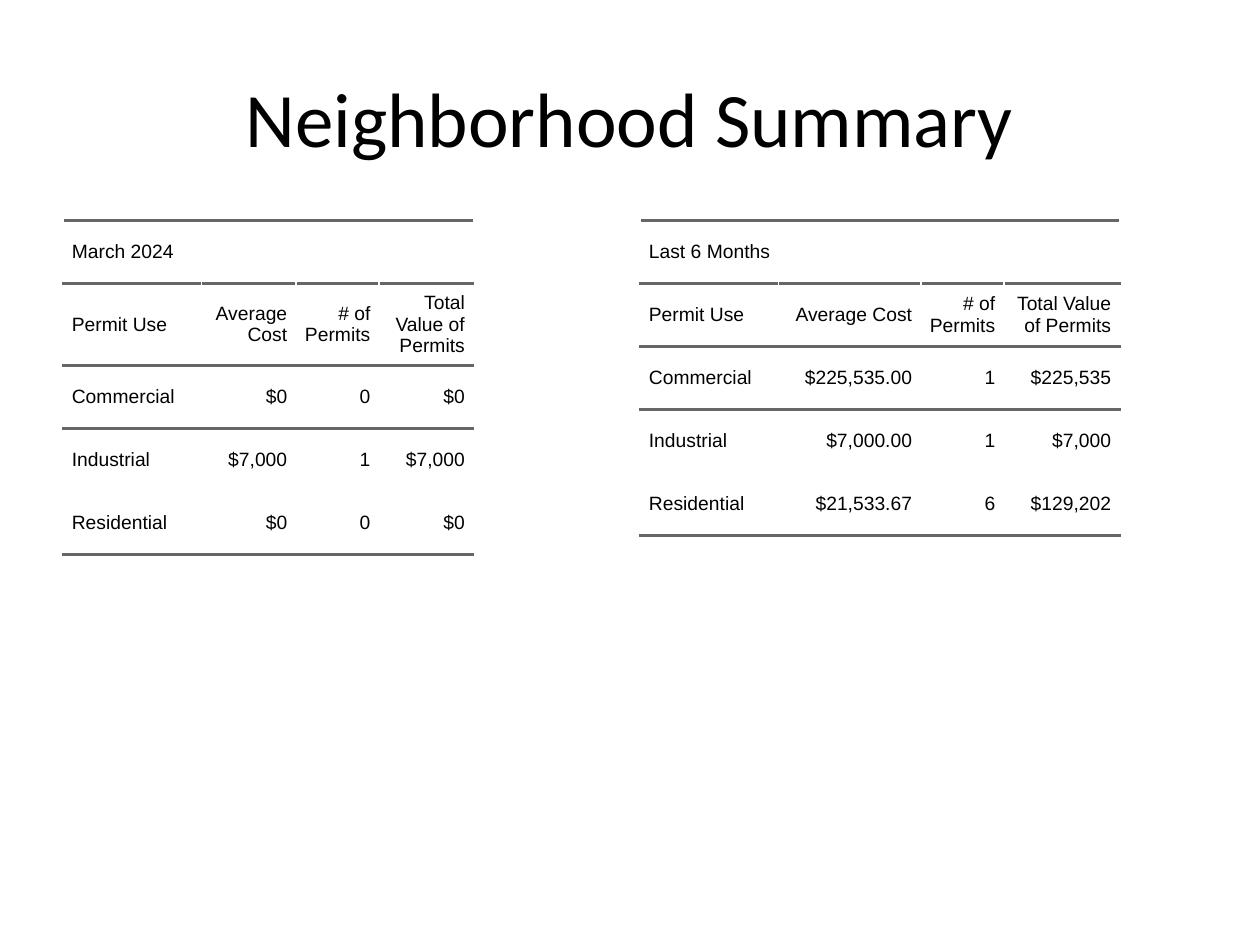
from lxml import etree
from pptx import Presentation
from pptx.dml.color import RGBColor
from pptx.enum.text import MSO_ANCHOR, PP_ALIGN
from pptx.oxml.ns import qn
from pptx.util import Inches, Pt

LEFT, CENTER, RIGHT = PP_ALIGN.LEFT, PP_ALIGN.CENTER, PP_ALIGN.RIGHT
MIDDLE = MSO_ANCHOR.MIDDLE
COLORS = {"text": "000000", "rule": "666666"}
PADDING = Inches(0.07)
TITLE_ONLY = 5
HEADINGS = ["Permit Use", "Average Cost", "# of Permits", "Total Value of Permits"]

MARCH = [
    ["Commercial", "$0", "0", "$0"],
    ["Industrial", "$7,000", "1", "$7,000"],
    ["Residential", "$0", "0", "$0"],
]
SIX_MONTHS = [
    ["Commercial", "$225,535.00", "1", "$225,535"],
    ["Industrial", "$7,000.00", "1", "$7,000"],
    ["Residential", "$21,533.67", "6", "$129,202"],
]


def style_font(font, name, size):
    """Set the typeface, size and text colour."""
    font.name = name
    font.size = Pt(size)
    font.bold = False
    font.color.rgb = RGBColor.from_string(COLORS["text"])


def add_rule(cell, side):
    """Draw a grey rule on one side of a cell, lnT or lnB."""
    line = etree.SubElement(cell._tc.get_or_add_tcPr(), qn(f"a:{side}"), w=str(Pt(1.5)))
    fill = etree.SubElement(line, qn("a:solidFill"))
    etree.SubElement(fill, qn("a:srgbClr"), val=COLORS["rule"])


def format_cell(cell, text, align, sides):
    """Fill a cell with text and give it its margins, rules and clear background."""
    cell.text = text
    cell.vertical_anchor = MIDDLE
    cell.margin_left = cell.margin_right = 0
    cell.margin_top = cell.margin_bottom = PADDING
    para = cell.text_frame.paragraphs[0]
    para.alignment = align
    para.space_before = para.space_after = Pt(5)
    style_font(para.font, "Arial", 11)
    indents = para._p.get_or_add_pPr()
    for name in ("marL", "marR"):
        indents.set(name, str(PADDING))
    indents.set("indent", "0")
    for side in sides:
        add_rule(cell, side)
    cell.fill.background()


def add_permit_table(page, box, period, widths, records):
    """Place a permit table with a merged period row inside the box."""
    rows = [[period, "", "", ""], HEADINGS, *records]
    frame = page.shapes.add_table(len(rows), len(HEADINGS), *box)
    table = frame.table
    table.first_row = table.horz_banding = False
    for column, width in zip(table.columns, widths):
        column.width = Inches(width)
    for row in table.rows:
        row.height = Inches(0.5)
    for r, values in enumerate(rows):
        sides = ["lnT", "lnB"] if r < 2 else []
        if r == 2:
            sides = ["lnT"]
        elif r == len(rows) - 1:
            sides = ["lnB"]
        for c, value in enumerate(values):
            format_cell(table.cell(r, c), value, RIGHT if c else LEFT, sides)
    table.cell(0, 0).merge(table.cell(0, len(HEADINGS) - 1))
    frame.width, frame.height = box[2:]


def add_title(page, box, text):
    """Place the slide title in its placeholder."""
    title = page.shapes.title
    title.left, title.top, title.width, title.height = box
    title.text_frame.text = text
    title.text_frame.vertical_anchor = MIDDLE
    para = title.text_frame.paragraphs[0]
    para.alignment = CENTER
    style_font(para.font, "Calibri", 44)


def main():
    """Build the neighborhood summary slide."""
    deck = Presentation()
    deck.slide_width, deck.slide_height = Inches(10), Inches(7.5)
    page = deck.slides.add_slide(deck.slide_layouts[TITLE_ONLY])
    add_title(page, [Inches(n) for n in (0.5, 0.3, 9, 1.25)], "Neighborhood Summary")
    tables = [
        (0.5, "March 2024", [1.1, 0.75, 0.66, 0.75], MARCH),
        (5.08, "Last 6 Months", [1.1, 1.13, 0.66, 0.92], SIX_MONTHS),
    ]
    for left, period, widths, records in tables:
        box = [Inches(n) for n in (left, 1.75, 4.42, 4.95)]
        add_permit_table(page, box, period, widths, records)
    deck.save("out.pptx")


if __name__ == "__main__":
    main()
